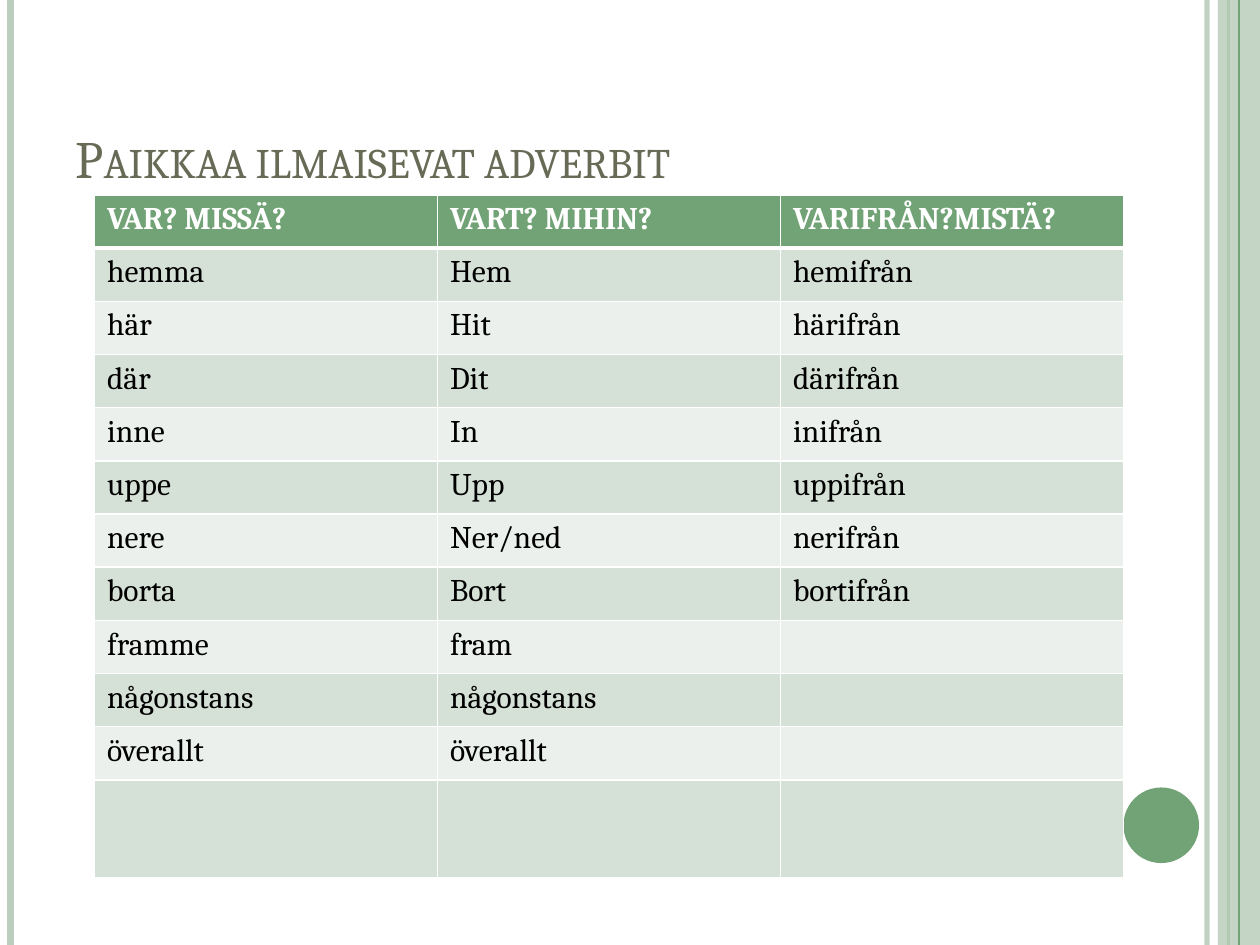
from lxml import etree
from pptx import Presentation
from pptx.dml.color import RGBColor
from pptx.enum import shapes, text
from pptx.oxml.ns import qn
from pptx.util import Pt

GREEN = RGBColor(0x72, 0xA3, 0x76)
PALE = RGBColor(0xBC, 0xCE, 0xBD)
BAND_DARK = RGBColor(0xD5, 0xE0, 0xD6)
BAND_LIGHT = RGBColor(0xEB, 0xF0, 0xEC)
OLIVE = RGBColor(0x67, 0x6A, 0x55)
WHITE = RGBColor(0xFF, 0xFF, 0xFF)
BLACK = RGBColor(0, 0, 0)

ROWS = [
    ("VAR? MISSÄ?", "VART? MIHIN?", "VARIFRÅN?MISTÄ?"),
    ("hemma", "Hem", "hemifrån"),
    ("här", "Hit", "härifrån"),
    ("där", "Dit", "därifrån"),
    ("inne", "In", "inifrån"),
    ("uppe", "Upp", "uppifrån"),
    ("nere", "Ner/ned", "nerifrån"),
    ("borta", "Bort", "bortifrån"),
    ("framme", "fram", ""),
    ("någonstans", "någonstans", ""),
    ("överallt", "överallt", ""),
    ("", "", ""),
]


def set_alpha(sp, percent):
    """Make the solid colour of a shape or line partly transparent."""
    clr = next(sp._element.spPr.iter(qn("a:srgbClr")))
    etree.SubElement(clr, qn("a:alpha"), val=str(percent * 1000))


def add_border(cell, side, width):
    """Give one side of a table cell a white border."""
    ln = etree.SubElement(cell._tc.get_or_add_tcPr(), qn("a:ln" + side), w=str(Pt(width)))
    fill = etree.SubElement(ln, qn("a:solidFill"))
    etree.SubElement(fill, qn("a:srgbClr"), val=str(WHITE))


prs = Presentation()
prs.slide_width, prs.slide_height = Pt(720), Pt(540)
slide = prs.slides.add_slide(prs.slide_layouts[5])

# Vertical stripes and the side panel, back to front
for kind, x, width, color, alpha in [
    ("line", 689.75, 3, PALE, 93),
    ("line", 6, 4.5, PALE, 100),
    ("line", 702, 1.5, GREEN, 100),
    ("panel", 696, 24, PALE, 87),
    ("line", 708, 0.75, GREEN, 100),
]:
    if kind == "line":
        sp = slide.shapes.add_connector(shapes.MSO_CONNECTOR.STRAIGHT, Pt(x), 0, Pt(x), Pt(540))
        sp.line.width = Pt(width)
        sp.line.color.rgb = color
        etree.SubElement(sp._element.spPr, qn("a:effectLst"))
    else:
        sp = slide.shapes.add_shape(shapes.MSO_SHAPE.RECTANGLE, Pt(x), 0, Pt(width), Pt(540))
        sp.fill.solid()
        sp.fill.fore_color.rgb = color
        sp.line.fill.background()
        sp.shadow.inherit = False
    if alpha < 100:
        set_alpha(sp, alpha)

# Corner circle
sp = slide.shapes.add_shape(shapes.MSO_SHAPE.OVAL, Pt(642), Pt(450), Pt(43.2), Pt(43.2))
sp.fill.solid()
sp.fill.fore_color.rgb = GREEN
sp.line.fill.background()
sp.shadow.inherit = False

# Title
title = slide.shapes.title
for name, value in {"left": 36, "top": 21.6, "width": 588, "height": 90}.items():
    setattr(title, name, Pt(value))
tf = title.text_frame
tf.auto_size = text.MSO_AUTO_SIZE.NONE
tf.vertical_anchor = text.MSO_ANCHOR.BOTTOM
p = tf.paragraphs[0]
p.alignment = text.PP_ALIGN.LEFT
r = p.add_run()
r.text = "Paikkaa ilmaisevat adverbit"
for name, value in {"name": "Cambria", "size": Pt(30)}.items():
    setattr(r.font, name, value)
r.font.color.rgb = OLIVE
r.font._element.set("cap", "small")

# Adverb table: header, banded rows, taller last row
heights = [30.4] * (len(ROWS) - 1) + [56]
table = slide.shapes.add_table(
    len(ROWS), 3, Pt(54), Pt(111.4), Pt(588), Pt(sum(heights))).table
for col in table.columns:
    col.width = Pt(196)
for i, (words, height) in enumerate(zip(ROWS, heights)):
    table.rows[i].height = Pt(height)
    header = i == 0
    for j, word in enumerate(words):
        cell = table.cell(i, j)
        for side in "LRTB":
            thick = (header and side == "B") or (i == 1 and side == "T")
            add_border(cell, side, 3 if thick else 1)
        cell.fill.solid()
        cell.fill.fore_color.rgb = GREEN if header else BAND_DARK if i % 2 else BAND_LIGHT
        if word:
            r = cell.text_frame.paragraphs[0].add_run()
            r.text = word
            for name, value in {"name": "Cambria", "size": Pt(18), "bold": header}.items():
                setattr(r.font, name, value)
            r.font.color.rgb = WHITE if header else BLACK

prs.save("out.pptx")
